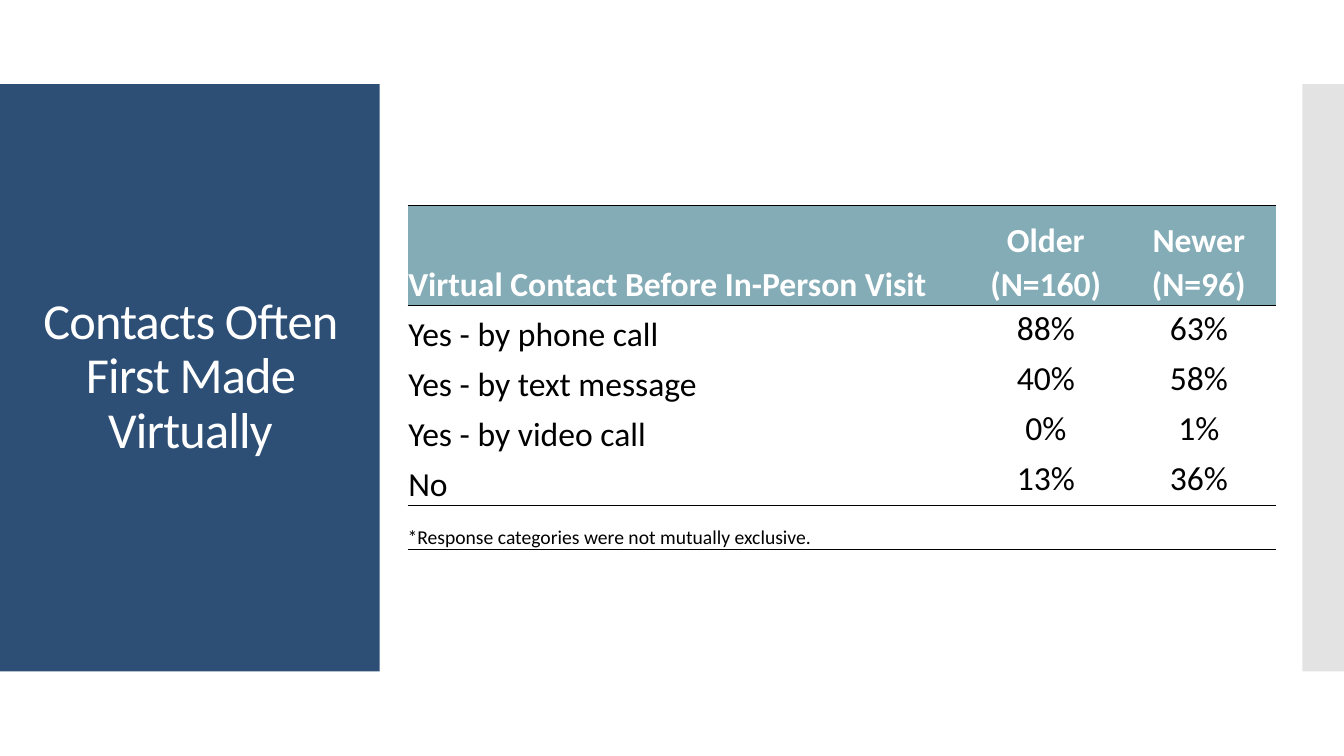
from lxml.etree import SubElement
from pptx import Presentation
from pptx.dml.color import RGBColor
from pptx.enum.shapes import MSO_SHAPE as Shape
from pptx.enum.text import MSO_ANCHOR as Anchor, PP_ALIGN as Align
from pptx.oxml import parse_xml
from pptx.oxml.ns import nsdecls, qn
from pptx.util import Cm, Pt

WHITE, BLACK, NAVY, TEAL, GREY = "FFFFFF", "000000", "2D4E75", "84ACB6", "C8C8C8"


def color(hex_code):
    return RGBColor.from_string(hex_code)


def set_borders(cell, ruled_sides):
    """Draw a 1 pt black line on the ruled sides (of L, R, T, B) and none on the others."""
    properties = cell._tc.get_or_add_tcPr()
    for index, side in enumerate("LRTB"):
        if side in ruled_sides:
            paint = f'<a:solidFill><a:srgbClr val="{BLACK}"/></a:solidFill>'
        else:
            paint = "<a:noFill/>"
        line = parse_xml(f'<a:ln{side} {nsdecls("a")} w="12700">{paint}</a:ln{side}>')
        properties.insert(index, line)


presentation = Presentation()
presentation.slide_width, presentation.slide_height = Cm(33.87), Cm(19.05)
slide = presentation.slides.add_slide(presentation.slide_layouts[6])

# Side panels
for left, width, fill in [(0, 9.57, NAVY), (32.82, 1.05, GREY)]:
    panel = slide.shapes.add_shape(Shape.RECTANGLE, Cm(left), Cm(2.12), Cm(width), Cm(14.8))
    panel.shadow.inherit = False
    panel.fill.solid()
    panel.fill.fore_color.rgb = color(fill)
    panel.line.fill.background()
    if fill == GREY:
        grey = panel.fill._xPr.find(".//" + qn("a:srgbClr"))
        SubElement(grey, qn("a:alpha"), val="50000")

# Title
title = slide.shapes.add_textbox(Cm(0.71), Cm(3.12), Cm(8.18), Cm(12.78))
frame = title.text_frame
frame.word_wrap = True
frame.vertical_anchor = Anchor.MIDDLE
frame.margin_left = frame.margin_right = frame.margin_top = frame.margin_bottom = Cm(0.13)
frame.text = "Contacts Often First Made Virtually"
paragraph = frame.paragraphs[0]
paragraph.alignment = Align.CENTER
paragraph.line_spacing = 0.9
run = paragraph.runs[0]
run.font.name, run.font.size = "Calibri", Pt(36)
run.font.color.rgb = color(WHITE)
run._r.get_or_add_rPr().set("spc", "-60")

# Table of contact types
rows = [
    ["Virtual Contact Before In-Person Visit", "Older\n(N=160)", "Newer\n(N=96)"],
    ["Yes - by phone call", "88%", "63%"],
    ["Yes - by text message", "40%", "58%"],
    ["Yes - by video call", "0%", "1%"],
    ["No", "13%", "36%"],
    ["*Response categories were not mutually exclusive.", "", ""],
]
column_widths = [14.17, 3.83, 3.88]
row_heights = [2.52] + [1.26] * 4 + [1.11]
note_row = len(rows) - 1
ruled_edges = {0, 1, note_row, note_row + 1}

table = slide.shapes.add_table(len(rows), len(column_widths), Cm(10.27), Cm(5.18),
                               Cm(sum(column_widths)), Cm(sum(row_heights))).table
table.first_row = table.horz_banding = False
for column, width in zip(table.columns, column_widths):
    column.width = Cm(width)
for row, height in zip(table.rows, row_heights):
    row.height = Cm(height)

for row_index, texts in enumerate(rows):
    is_header, is_note = row_index == 0, row_index == note_row
    sides = ("T" if row_index in ruled_edges else "") + ("B" if row_index + 1 in ruled_edges else "")
    for column_index, text in enumerate(texts):
        cell = table.cell(row_index, column_index)
        set_borders(cell, sides)
        if is_header:
            cell.fill.solid()
            cell.fill.fore_color.rgb = color(TEAL)
        else:
            cell.fill.background()
        cell.margin_left = cell.margin_right = Cm(0 if is_note else 0.02)
        cell.margin_top = cell.margin_bottom = 0
        cell.vertical_anchor = Anchor.BOTTOM if is_header or column_index == 0 else Anchor.TOP
        cell.text_frame.text = text
        for paragraph in cell.text_frame.paragraphs:
            paragraph.alignment = Align.CENTER if column_index else Align.LEFT
            paragraph.line_spacing = 1.07
            for run in paragraph.runs:
                run.font.name, run.font.size = "Calibri", Pt(14 if is_note else 24)
                run.font.bold = is_header
                run.font.color.rgb = color(WHITE if is_header else BLACK)
table.cell(note_row, 0).merge(table.cell(note_row, len(column_widths) - 1))

presentation.save("out.pptx")
